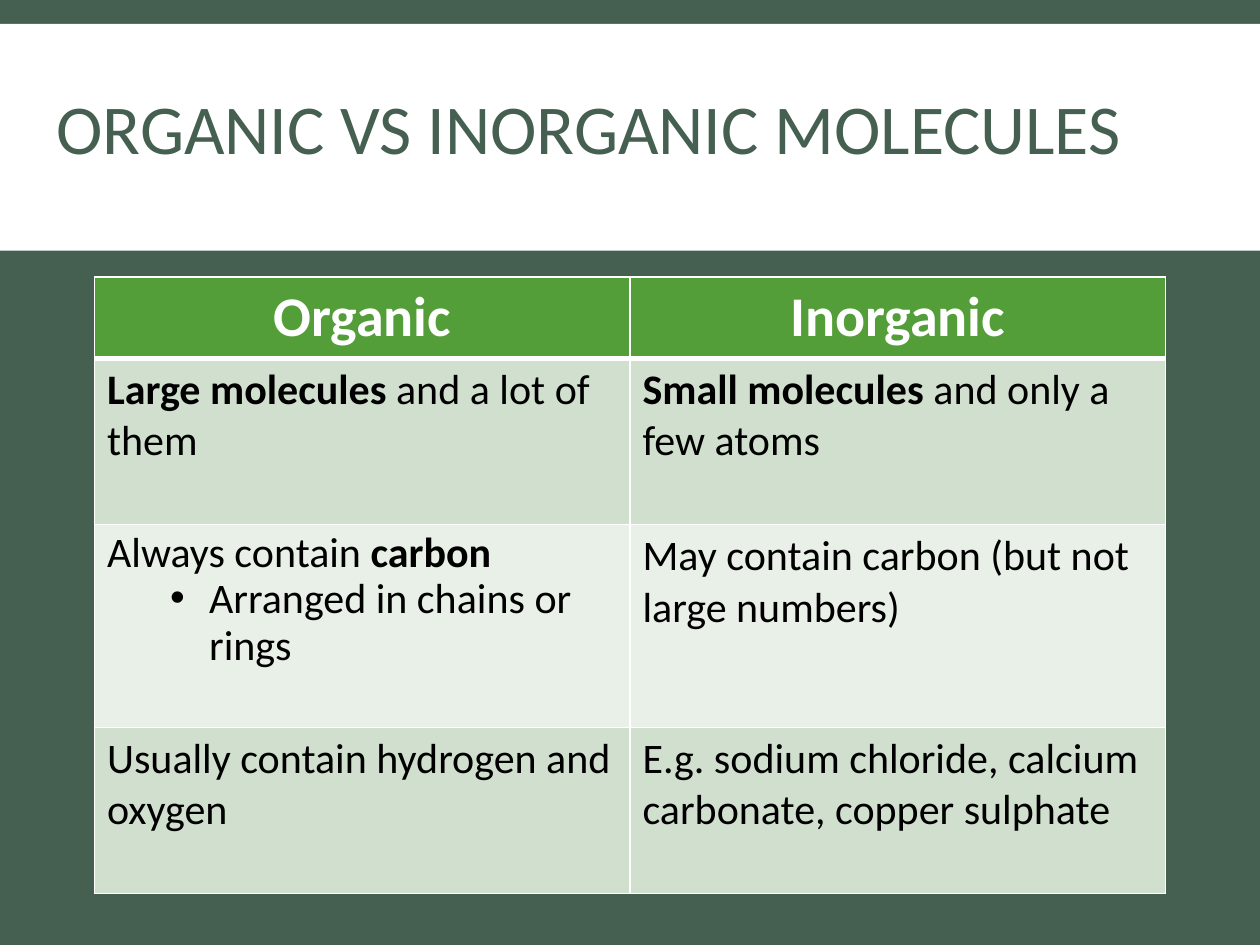
from lxml import etree
from pptx import Presentation
from pptx.dml.color import RGBColor
from pptx.enum.shapes import MSO_SHAPE
from pptx.enum.text import MSO_ANCHOR, MSO_AUTO_SIZE, PP_ALIGN
from pptx.oxml.ns import qn
from pptx.util import Inches, Pt

RECTANGLE = MSO_SHAPE.RECTANGLE
MIDDLE = MSO_ANCHOR.MIDDLE
NO_AUTOFIT = MSO_AUTO_SIZE.NONE
LEFT, CENTER = PP_ALIGN.LEFT, PP_ALIGN.CENTER

FONT = "Calibri"
DARK_GREEN, WHITE, BLACK = "455F51", "FFFFFF", "000000"
ROW_FILLS = ["549E39", "D1DFCE", "E9F0E8", "D1DFCE"]
ROW_HEIGHTS = [0.64, 1.32, 1.61, 1.32]


def color(value):
    return RGBColor.from_string(value)


def add_border(cell, side, width):
    line = etree.SubElement(cell._tc.get_or_add_tcPr(), qn(f"a:ln{side}"), w=str(Pt(width)))
    fill = etree.SubElement(line, qn("a:solidFill"))
    etree.SubElement(fill, qn("a:srgbClr"), val=WHITE)


presentation = Presentation()
presentation.slide_width, presentation.slide_height = Inches(10), Inches(7.5)
slide = presentation.slides.add_slide(presentation.slide_layouts[5])
slide.background.fill.solid()
slide.background.fill.fore_color.rgb = color(DARK_GREEN)

# Title, with the white band behind it
title = slide.shapes.title
title.left, title.top = Inches(0.35), Inches(0.29)
title.width, title.height = Inches(9.45), Inches(1.53)
title.text_frame.text = "ORGANIC VS INORGANIC MOLECULES"
title.text_frame.vertical_anchor = MIDDLE
title.text_frame.auto_size = NO_AUTOFIT
paragraph = title.text_frame.paragraphs[0]
paragraph.alignment = LEFT
paragraph.line_spacing = 0.85
paragraph.font.name = FONT
paragraph.font.size = Pt(40)
paragraph.font.color.rgb = color(DARK_GREEN)

band = slide.shapes.add_shape(RECTANGLE, 0, Inches(0.19), Inches(10), Inches(1.8))
band.shadow.inherit = False
band.fill.solid()
band.fill.fore_color.rgb = color(WHITE)
band.line.fill.background()
title.element.addprevious(band.element)

# Comparison table: each cell is a list of paragraphs, each a list of (text, bold) runs
rows = [
    [[[("Organic", True)]], [[("Inorganic", True)]]],
    [[[("Large molecules ", True), ("and a lot of them", False)]],
     [[("Small molecules ", True), ("and only a few atoms", False)]]],
    [[[("Always contain ", False), ("carbon", True)],
      [("Arranged in chains or rings", False)]],
     [[("May contain carbon (but not large numbers)", False)]]],
    [[[("Usually contain hydrogen and oxygen", False)]],
     [[("E.g. sodium chloride, calcium carbonate, copper sulphate", False)]]],
]
table = slide.shapes.add_table(
    len(rows), 2, Inches(0.75), Inches(2.2), Inches(8.5), Inches(sum(ROW_HEIGHTS))).table

for row_index, row in enumerate(rows):
    table.rows[row_index].height = Inches(ROW_HEIGHTS[row_index])
    is_header = row_index == 0
    for column_index, paragraphs in enumerate(row):
        cell = table.cell(row_index, column_index)
        for side in "LRTB":
            under_header = (row_index, side) in [(0, "B"), (1, "T")]
            add_border(cell, side, 3 if under_header else 1)
        cell.fill.solid()
        cell.fill.fore_color.rgb = color(ROW_FILLS[row_index])

        for paragraph_index, runs in enumerate(paragraphs):
            frame = cell.text_frame
            paragraph = frame.add_paragraph() if paragraph_index else frame.paragraphs[0]
            paragraph.alignment = CENTER if is_header else LEFT
            paragraph.font.name = FONT
            paragraph.font.size = Pt(32 if is_header else 24)
            paragraph.font.color.rgb = color(WHITE if is_header else BLACK)
            if len(paragraphs) > 1:
                paragraph.line_spacing = 0.9
            for text, bold in runs:
                run = paragraph.add_run()
                run.text = text
                run.font.bold = bold

# Bullet under the carbon entry
bullet = table.cell(2, 0).text_frame.paragraphs[1]
bullet.level = 1
properties = bullet._p.get_or_add_pPr()
properties.set("marL", str(Inches(0.81)))
properties.set("indent", str(Inches(-0.31)))
marker_font = etree.Element(qn("a:buFont"), typeface="Arial")
marker = etree.Element(qn("a:buChar"), char="•")
properties.find(qn("a:lnSpc")).addnext(marker_font)
marker_font.addnext(marker)

presentation.save("out.pptx")
